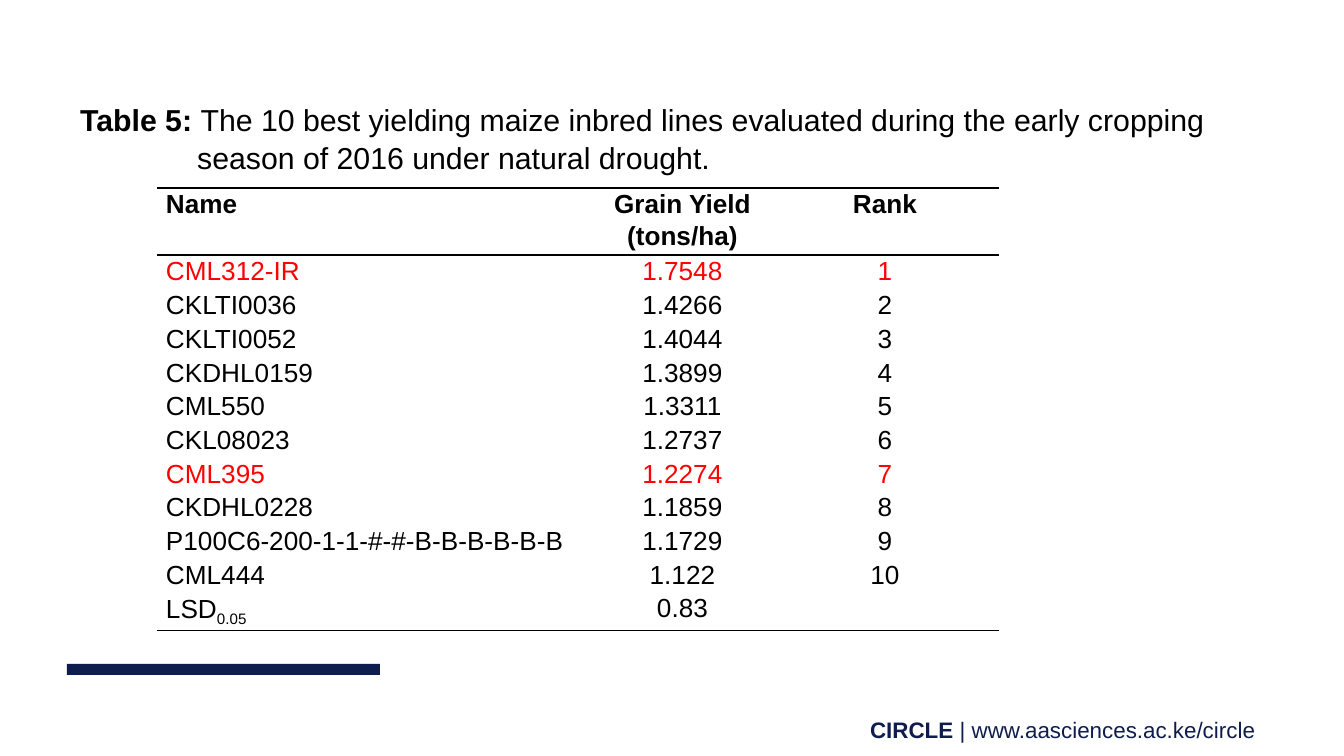
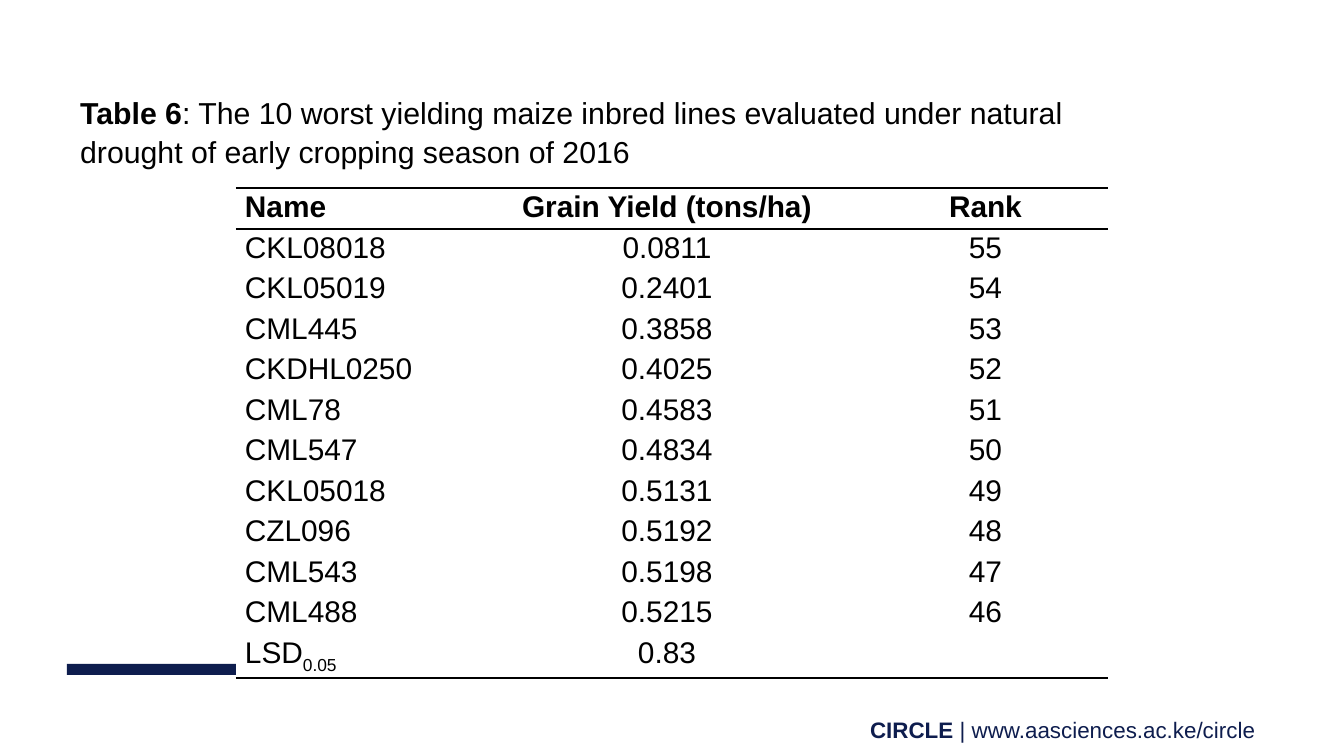
from dataclasses import dataclass

from lxml.etree import SubElement as Sub
from pptx import Presentation
from pptx.dml.color import RGBColor as Rgb
from pptx.enum.shapes import MSO_SHAPE as Shape
from pptx.enum.text import MSO_ANCHOR as Anchor, PP_ALIGN as Align
from pptx.oxml.ns import qn
from pptx.util import Emu, Pt

SCALE = 9144000 / 1344
PLAIN = "{2D5ABB26-0587-4C30-8999-92F81FD0307C}"


@dataclass(frozen=True)
class Theme:
    face: str = "Arial"
    navy: str = "0E1D4E"
    black: str = "000000"
    red: str = "FF0000"
    white: str = "FFFFFF"
    title: float = 16.2
    foot: int = 12
    rule: int = 1


THEME = Theme()

BEST = [
    ("CML312-IR", "1.7548", "1"),
    ("CKLTI0036", "1.4266", "2"),
    ("CKLTI0052", "1.4044", "3"),
    ("CKDHL0159", "1.3899", "4"),
    ("CML550", "1.3311", "5"),
    ("CKL08023", "1.2737", "6"),
    ("CML395", "1.2274", "7"),
    ("CKDHL0228", "1.1859", "8"),
    ("P100C6-200-1-1-#-#-B-B-B-B-B-B", "1.1729", "9"),
    ("CML444", "1.122", "10"),
]
WORST = [
    ("CKL08018", "0.0811", "55"),
    ("CKL05019", "0.2401", "54"),
    ("CML445", "0.3858", "53"),
    ("CKDHL0250", "0.4025", "52"),
    ("CML78", "0.4583", "51"),
    ("CML547", "0.4834", "50"),
    ("CKL05018", "0.5131", "49"),
    ("CZL096", "0.5192", "48"),
    ("CML543", "0.5198", "47"),
    ("CML488", "0.5215", "46"),
]
HEAD = ("Name", "Grain Yield (tons/ha)", "Rank")
LSD = ("LSD", "0.83", "")
CHECKS = {"CML312-IR", "CML395"}


def px(num):
    return Emu(round(num * SCALE))


def style(para, size, color, bold=None):
    font = para.font
    font.name = THEME.face
    font.size = Pt(size)
    font.color.rgb = Rgb.from_string(color)
    font.bold = bold


def add_run(para, text, bold=None):
    run = para.add_run()
    run.text = text
    run.font.bold = bold
    return run


def add_box(slide, *area):
    frame = slide.shapes.add_textbox(*map(px, area)).text_frame
    frame.word_wrap = True
    return frame


def add_foot(slide):
    para = add_box(slide, 672, 710, 603, 40).paragraphs[0]
    para.alignment = Align.RIGHT
    style(para, THEME.foot, THEME.navy)
    add_run(para, "CIRCLE ", True)
    add_run(para, "| www.aasciences.ac.ke/circle ", False)


def add_bar(slide):
    bar = slide.shapes.add_shape(Shape.RECTANGLE, *map(px, (67, 664, 313, 11)))
    bar.shadow.inherit = False
    bar.fill.solid()
    bar.fill.fore_color.rgb = Rgb.from_string(THEME.navy)
    bar.line.fill.background()


def add_title(slide, top, high, label, lines, hang=0):
    frame = add_box(slide, 67, top, 1210, high)
    frame.vertical_anchor = Anchor.MIDDLE
    para = frame.paragraphs[0]
    para.line_spacing = 1.05
    if hang:
        props = para._p.get_or_add_pPr()
        props.set("marL", str(px(hang)))
        props.set("indent", str(px(-hang)))
    style(para, THEME.title, THEME.black)
    add_run(para, label, True)
    for num, line in enumerate(lines):
        if num:
            para.add_line_break()
        add_run(para, line, False)


def add_edge(cell, side):
    line = Sub(cell._tc.get_or_add_tcPr(), qn("a:ln" + side), w=str(Pt(THEME.rule)))
    Sub(Sub(line, qn("a:solidFill")), qn("a:srgbClr"), val=THEME.black)


def fill_cell(cell, text, size, color, bold, align, edges):
    cell.margin_left = cell.margin_right = px(9)
    cell.margin_top = cell.margin_bottom = 0
    for side in edges:
        add_edge(cell, side)
    cell.fill.solid()
    cell.fill.fore_color.rgb = Rgb.from_string(THEME.white)
    para = cell.text_frame.paragraphs[0]
    para.alignment = align
    para.line_spacing = 1.07
    style(para, size, color, bold)
    if not text:
        Sub(para._p, qn("a:endParaRPr"), sz=str(size * 100))
        return
    add_run(para, text)
    if text == LSD[0]:
        add_run(para, "0.05").font._element.set("baseline", "-25000")


def add_grid(slide, left, cols, head, body, size, data):
    rows = [HEAD, *data, LSD]
    last = len(rows) - 1
    area = map(px, (left, 188, sum(cols), head + body))
    grid = slide.shapes.add_table(len(rows), len(cols), *area).table
    grid.first_row = grid.horz_banding = False
    grid._tbl.tblPr.find(qn("a:tableStyleId")).text = PLAIN
    for col, wide in zip(grid.columns, cols):
        col.width = px(wide)
    for num, row in enumerate(rows):
        grid.rows[num].height = px(body / last if num else head)
        color = THEME.red if row[0] in CHECKS else THEME.black
        edges = {0: "TB", last: "B"}.get(num, "")
        for pos, text in enumerate(row):
            align = Align.CENTER if pos else Align.LEFT
            fill_cell(grid.cell(num, pos), text, size, color, num == 0, align, edges)


def add_page(deck):
    slide = deck.slides.add_slide(deck.slide_layouts[6])
    add_foot(slide)
    add_bar(slide)
    return slide


def main():
    deck = Presentation()
    deck.slide_width, deck.slide_height = px(1344), px(756)

    best = add_page(deck)
    add_title(best, 92, 90, "Table 5: ", [
        "The 10 best yielding maize inbred lines evaluated during the early cropping "
        "season of 2016 under natural drought."], hang=117)
    add_grid(best, 157, (437, 177, 228), 67, 371, 14, BEST)

    worst = add_page(deck)
    add_title(worst, 81, 100, "Table 6", [
        ": The 10 worst yielding maize inbred lines evaluated under natural",
        "drought of early cropping season of 2016"])
    add_grid(worst, 236, (235, 392, 245), 41, 446, 16, WORST)

    deck.save("out.pptx")


if __name__ == "__main__":
    main()
